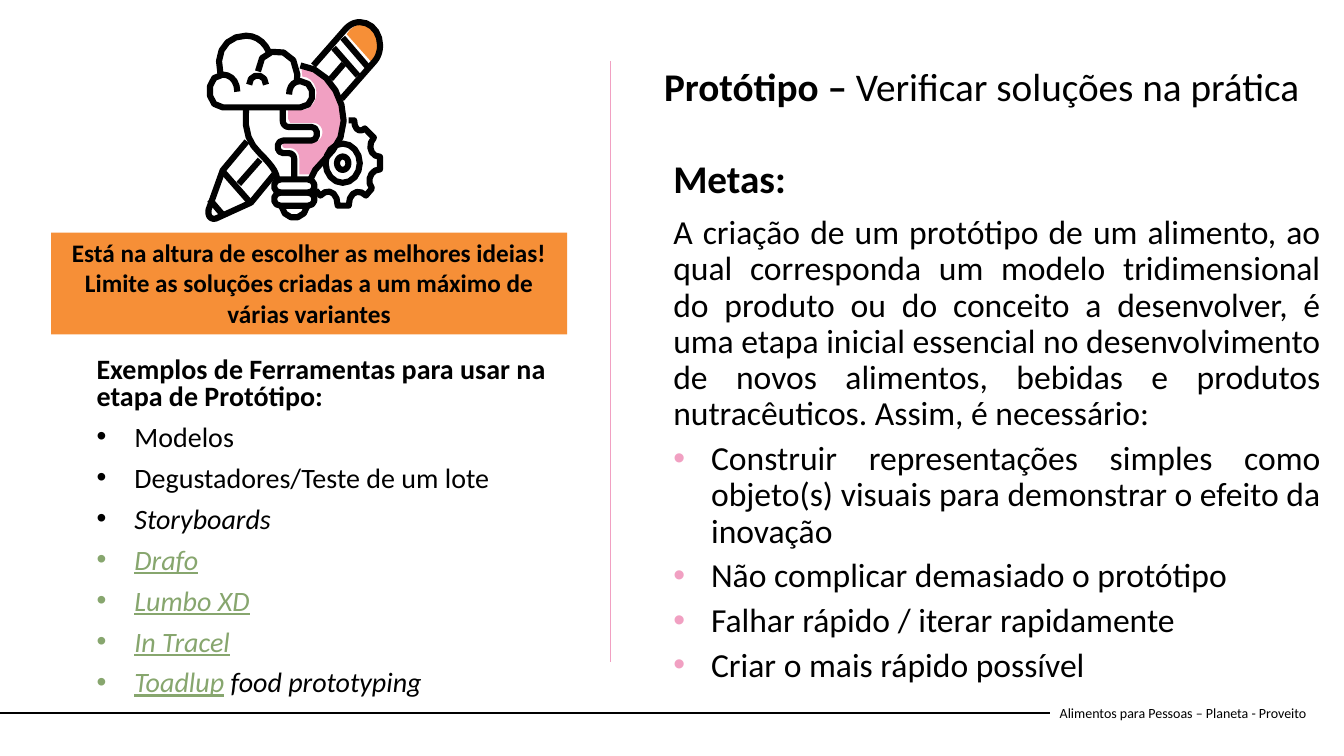
from dataclasses import dataclass
from math import cos, pi, sin

from lxml.etree import SubElement
from pptx import Presentation
from pptx.dml.color import RGBColor
from pptx.enum.shapes import MSO_CONNECTOR, MSO_SHAPE
from pptx.enum.text import MSO_ANCHOR, PP_ALIGN
from pptx.oxml.ns import qn
from pptx.util import Pt


@dataclass(frozen=True)
class Theme:
    """Colours, font and type sizes of the slide."""
    font: str = "Calibri"
    black: str = "000000"
    ink: str = "010101"
    orange: str = "F68F37"
    pink: str = "F1A0C2"
    green: str = "87A66E"
    heading: int = 28
    body: int = 24
    tools: int = 20
    banner: int = 18
    footer: int = 10
    stroke: float = 4.4


def add_run(p, text, size, color=Theme.black, bold=False, italic=False, underline=False):
    """Append a formatted run to a paragraph."""
    r = p.add_run()
    r.text = text
    f = r.font
    f.name, f.size, f.bold, f.italic = Theme.font, Pt(size), bold, italic
    f.underline = underline
    f.color.rgb = RGBColor.from_string(color)


def flatten(nodes, steps=5):
    """Turn points and cubic curve segments into a list of points."""
    points = []
    for node in nodes:
        if len(node) == 2:
            points.append(node)
            continue
        start = points[-1]
        a, b, end = node[:2], node[2:4], node[4:]
        for i in range(1, steps + 1):
            t = i / steps
            u = 1 - t
            points.append(tuple(
                u**3 * start[k] + 3 * u * u * t * a[k] + 3 * u * t * t * b[k] + t**3 * end[k]
                for k in (0, 1)))
    return points


def ellipse(cx, cy, rx, ry, n=16):
    """Return the points of a closed ellipse."""
    angles = [2 * pi * i / n for i in range(n + 1)]
    return [(cx + rx * cos(a), cy + ry * sin(a)) for a in angles]


def capsule(x, y, w, h):
    """Return a closed bar with rounded ends."""
    left, right, bottom, bulge = x + h / 2, x + w - h / 2, y + h, h * 0.17
    return [(left, y), (right, y), (x + w + bulge, y, x + w + bulge, bottom, right, bottom),
            (left, bottom), (x - bulge, bottom, x - bulge, y, left, y)]


class Deck:
    """Holds the theme and the current slide."""

    def __init__(self, theme):
        self.theme = theme
        self.prs = Presentation()
        self.prs.slide_width, self.prs.slide_height = Pt(960), Pt(540)
        self.s = self.prs.slides.add_slide(self.prs.slide_layouts[6])

    def style(self, sp, fill=None, line=None, width=None):
        """Set fill and outline and remove the shadow."""
        sp.shadow.inherit = False
        if fill:
            sp.fill.solid()
            sp.fill.fore_color.rgb = RGBColor.from_string(fill)
        else:
            sp.fill.background()
        if line:
            sp.line.color.rgb = RGBColor.from_string(line)
            sp.line.width = Pt(width)
        else:
            sp.line.fill.background()

    def line(self, x1, y1, x2, y2, color, width):
        """Draw a straight line."""
        c = self.s.shapes.add_connector(MSO_CONNECTOR.STRAIGHT, Pt(x1), Pt(y1), Pt(x2), Pt(y2))
        c.line.color.rgb = RGBColor.from_string(color)
        c.line.width = Pt(width)
        SubElement(c._element.spPr, qn("a:effectLst"))

    def text(self, x, y, w, h, anchor=MSO_ANCHOR.TOP):
        """Add a wrapping text box and return its frame."""
        tf = self.s.shapes.add_textbox(Pt(x), Pt(y), Pt(w), Pt(h)).text_frame
        tf.word_wrap = True
        tf.vertical_anchor = anchor
        return tf

    def banner(self, x, y, w, h, fill):
        """Add a filled rectangle and return its text frame."""
        sp = self.s.shapes.add_shape(MSO_SHAPE.RECTANGLE, Pt(x), Pt(y), Pt(w), Pt(h))
        self.style(sp, fill)
        tf = sp.text_frame
        tf.word_wrap, tf.vertical_anchor = True, MSO_ANCHOR.TOP
        return tf

    def para(self, tf, runs, size, align=PP_ALIGN.LEFT, spacing=None, before=0,
             bullet=False, bullet_color=None):
        """Fill the first empty paragraph or add one, with (text, format) runs."""
        p = tf.paragraphs[0] if not tf.paragraphs[0].runs else tf.add_paragraph()
        p.alignment, p.line_spacing, p.space_before = align, spacing, Pt(before)
        if bullet:
            pPr = p._p.get_or_add_pPr()
            pPr.set("marL", str(Pt(27)))
            pPr.set("indent", str(-Pt(27)))
            if bullet_color:
                SubElement(SubElement(pPr, qn("a:buClr")), qn("a:srgbClr"), val=bullet_color)
            SubElement(pPr, qn("a:buFont"), typeface="Arial")
            SubElement(pPr, qn("a:buChar"), char="•")
        for text, fmt in runs:
            add_run(p, text, size, **fmt)

    def freeform(self, shapes, contours, close=False, **style):
        """Build one styled outline from contours of points and curves."""
        fb = None
        for nodes in contours:
            points = [(Pt(x), Pt(y)) for x, y in flatten(nodes)]
            if fb is None:
                fb = shapes.build_freeform(*points[0], scale=1.0)
            else:
                fb.move_to(*points[0])
            fb.add_line_segments(points[1:], close=close)
        self.style(fb.convert_to_shape(), **style)


def draw_icon(d):
    """Draw the pencil, bulb, cloud and gear."""
    t = d.theme
    eraser = [(258.5, 17.3), (265.7, 17.3, 271.4, 23.8, 271.4, 31.7),
              (271.4, 35.3, 270, 38.9, 267.8, 41), (265, 43.9), (247.7, 24.5),
              (249.8, 21.6), (252.7, 18.7, 255.6, 17.3, 258.5, 17.3)]
    glow = [(244.8, 85), (244.8, 97.2, 239, 103, 233.3, 109.4),
            (229.7, 113.8, 225.4, 118.1, 223.2, 124.6), (213.8, 124.6), (213.8, 113),
            (213.8, 109.4, 211, 105.8, 207.4, 105.8), (203.8, 105.8),
            (200.9, 105.8, 200.9, 101.5, 203.8, 101.5), (223.9, 101.5),
            (227.5, 101.5, 230.4, 98.6, 230.4, 94.3),
            (230.4, 90.7, 227.5, 87.8, 223.9, 87.8), (207.4, 87.8), (205.9, 85),
            (205.9, 78.5), (216, 78.5), (221.8, 78.5, 226.1, 72.7, 226.1, 66.2),
            (226.1, 60.5, 221.8, 54.7, 216, 54.7), (215.3, 48.2),
            (231.8, 49.7, 244.8, 66.2, 244.8, 85)]
    gear = [(249.1, 86), (253, 86), (253, 93, 257.5, 95, 260.6, 91.8), (267.1, 98.3),
            (262, 104, 265, 112, 271.4, 112), (271.4, 121),
            (265, 121, 261.5, 129, 265.7, 134.6), (261.4, 139.7),
            (256.5, 134.5, 249.1, 137, 249.1, 146.9), (241.2, 146.9),
            (241.2, 137, 234, 134, 228.9, 139.7), (225.5, 136)]
    pencil_top = [(223.9, 46.8), (247, 20.5), (250, 17.3, 253.5, 15.8, 257, 15.8),
                  (265, 15.8, 271.5, 23, 271.5, 32.4),
                  (271.5, 37, 270, 41, 267.5, 43.9), (244, 70.6)]
    pencil_tip = [(176.4, 101), (159.1, 121.7), (149, 149.8),
                  (148, 154.8, 151, 157, 154.1, 156.2), (179.3, 144.7), (195.8, 124.6)]
    bulb_left = [(175.7, 76.7), (173.5, 100.8, 182.5, 105.8, 189, 113),
                 (193.7, 118.1, 197.3, 122.4, 198, 127.8)]
    bulb_right = [(221.8, 128), (223.9, 116.6, 245.5, 108.7, 245.5, 86.4),
                  (245.5, 67, 231.8, 48.2, 214.6, 46.8)]
    filament = [(202, 76.7), (202, 86.4), (202, 88.6, 203.8, 90.7, 206, 90.7),
                (222.5, 90.7), (227.8, 90.7, 227.8, 100.4, 222.5, 100.4), (202.3, 100.4),
                (197, 100.4, 197, 109.4, 202.3, 109.4), (206, 109.4),
                (209, 109.4, 210.2, 111.6, 210.2, 113.8), (210.2, 128)]
    cloud = [(169.5, 65.5), (169.5, 58, 165, 53.3, 159.1, 53.3),
             (146.5, 53.3, 146.5, 76.7, 159.1, 76.7), (214.6, 76.7),
             (226, 76.7, 226, 58, 214.6, 58), (209.5, 58, 206.5, 62, 206.5, 67.5)]
    lobes = [[(157.5, 53), (153, 36, 163, 25.5, 175.7, 25.5), (183, 25.5, 189, 30, 192, 37)],
             [(184.3, 51), (184.3, 31, 212.4, 32, 212.4, 53.3), (212, 58)],
             [(178, 60.5), (178, 51.8, 190, 51.8, 190, 60.5)]]
    bands = [[(244.8, 27), (262.1, 47.2)], [(238.3, 34.2), (255.6, 54)],
             [(245.5, 45.7), (236.2, 56.5)], [(159.1, 122.4), (179.3, 145.4)],
             [(185.8, 114.1), (170.6, 131.4)], [(149.8, 142.6), (158.4, 152.6)]]
    bulb_foot = [(200.9, 147), (203, 158.4, 217.4, 158.4, 219.6, 147)]
    hub = [ellipse(244.8, 116.6, rx, ry) for rx, ry in ((12.2, 14), (4.1, 4.8))]
    sockets = [capsule(195.8, y, 28.8, 9.4) for y in (128.2, 137.6)]

    shapes = d.s.shapes.add_group_shape().shapes
    d.freeform(shapes, [eraser], close=True, fill=t.orange)
    d.freeform(shapes, [glow], close=True, fill=t.pink)
    d.freeform(shapes, [gear, pencil_top, pencil_tip, bulb_left, bulb_right, filament, cloud,
                        bulb_foot, *lobes, *bands, *hub, *sockets],
               line=t.ink, width=t.stroke)


def main():
    """Build the prototype slide."""
    d = Deck(Theme())
    t = d.theme
    bold, italic = {"bold": True}, {"italic": True}
    link = {"italic": True, "underline": True, "color": t.green}

    tf = d.text(749.9, 494.6, 196.6, 28.8, MSO_ANCHOR.MIDDLE)
    d.para(tf, [("Alimentos para Pessoas – Planeta - Proveito", {})], t.footer)
    d.line(0, 509, 749.9, 509, t.black, 1.5)

    tf = d.text(473.8, 110.2, 476.6, 293)
    body = {"align": PP_ALIGN.JUSTIFY, "spacing": 0.9}
    d.para(tf, [("Metas:", bold)], t.heading, before=10, **body)
    d.para(tf, [("A criação de um protótipo de um alimento, ao qual corresponda um modelo "
                 "tridimensional do produto ou do conceito a desenvolver, é uma etapa inicial "
                 "essencial no desenvolvimento de novos alimentos, bebidas e produtos "
                 "nutracêuticos. Assim, é necessário:", {})], t.body, before=10, **body)
    for goal in ("Construir representações simples como objeto(s) visuais para demonstrar "
                 "o efeito da inovação",
                 "Não complicar demasiado o protótipo",
                 "Falhar rápido / iterar rapidamente",
                 "Criar o mais rápido possível"):
        d.para(tf, [(goal, {})], t.body, before=6, bullet=True, bullet_color=t.pink, **body)

    tf = d.text(467.3, 44.6, 483.1, 90)
    d.para(tf, [("Protótipo – ", bold), ("Verificar soluções na prática", {})],
           t.heading, spacing=0.9, before=10)

    tf = d.text(61.9, 252.3, 365.8, 270.7)
    d.para(tf, [("Exemplos de Ferramentas para usar na etapa de Protótipo:", bold)],
           t.tools, spacing=0.8, before=10)
    for runs in ([("Modelos", {})], [("Degustadores/Teste de um lote", {})],
                 [("Storyboards", italic)], [("Drafo", link)], [("Lumbo XD", link)],
                 [("In Tracel", link)],
                 [("Toadlup", link), (" food prototyping", italic)]):
        d.para(tf, runs, t.tools, spacing=0.8, before=10, bullet=True)

    tf = d.banner(36.5, 166.1, 368.6, 72.7, t.orange)
    for line in ("Está na altura de escolher as melhores ideias!",
                 "Limite as soluções criadas a um máximo de várias variantes"):
        d.para(tf, [(line, bold)], t.banner, PP_ALIGN.CENTER)
    d.line(436.3, 43.5, 436.3, 472.6, t.pink, 0.5)
    draw_icon(d)
    d.prs.save("out.pptx")


if __name__ == "__main__":
    main()
